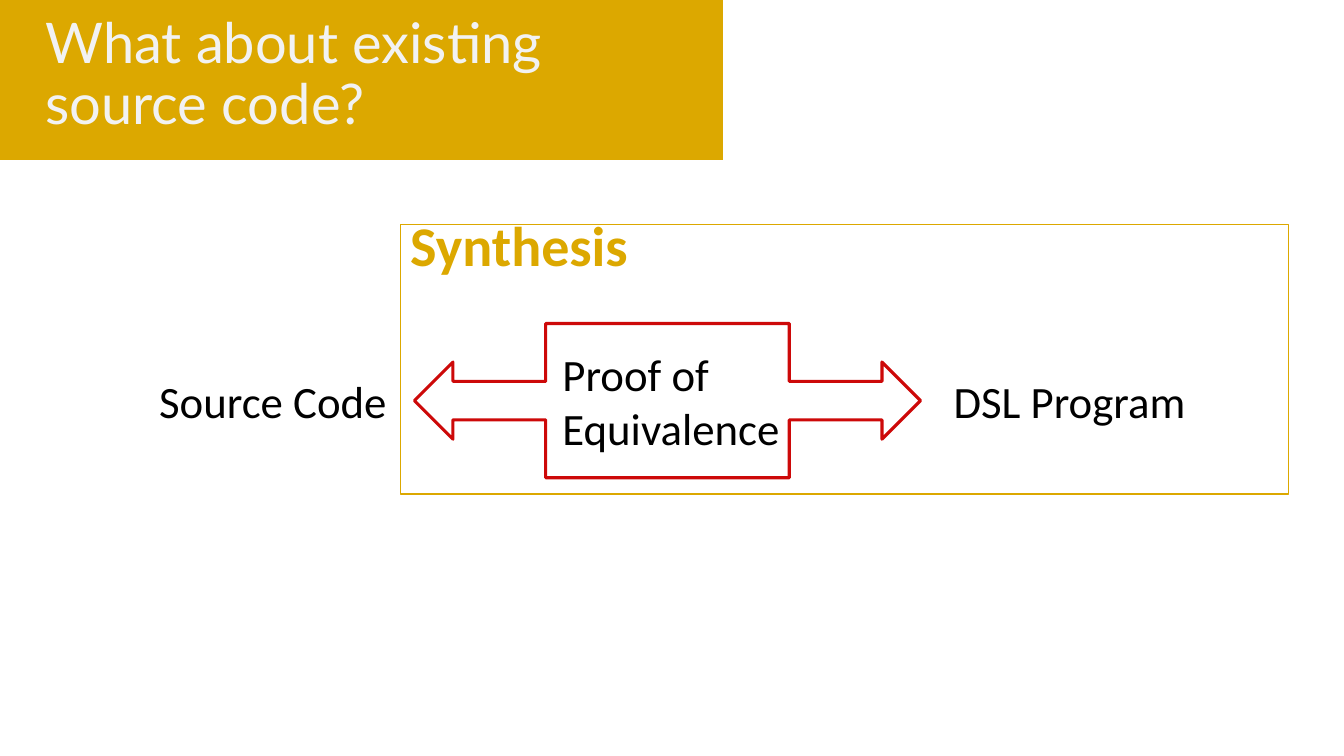
from dataclasses import dataclass

from pptx import Presentation
from pptx.dml.color import RGBColor
from pptx.enum.shapes import MSO_SHAPE as Shape
from pptx.enum.text import MSO_ANCHOR as Anchor, MSO_AUTO_SIZE as AutoSize, PP_ALIGN as Align
from pptx.slide import Slide
from pptx.util import Inches, Pt


@dataclass(frozen=True)
class Theme:
    gold: str = "DCA800"
    red: str = "CD0909"
    white: str = "FFFFFF"
    black: str = "000000"
    title_color: str = "F2F2F2"
    title_font: str = "Lato"
    body_font: str = "Calibri"
    large: int = 40
    body: int = 32


THEME = Theme()


@dataclass(frozen=True)
class Box:
    left: float
    top: float
    width: float
    height: float


@dataclass(frozen=True)
class Panel:
    kind: Shape
    box: Box
    fill: str
    line: str
    weight: float


@dataclass(frozen=True)
class Label:
    text: str
    box: Box
    size: int = THEME.body
    color: str = THEME.black
    bold: bool = False


PANELS = [
    Panel(Shape.FLOWCHART_PROCESS, Box(-0.01, -0.02, 7.19, 1.62), THEME.gold, THEME.white, 1.5),
    Panel(Shape.FLOWCHART_PROCESS, Box(3.97, 2.23, 8.81, 2.67), THEME.white, THEME.gold, 1),
    Panel(Shape.LEFT_RIGHT_ARROW_CALLOUT, Box(4.11, 3.21, 5.02, 1.53),
          THEME.white, THEME.red, 2.25),
]
LABELS = [
    Label("Source Code", Box(1.48, 3.66, 2.48, 0.64)),
    Label("DSL Program", Box(9.36, 3.66, 2.53, 0.64)),
    Label("Proof of\nEquivalence", Box(5.48, 3.39, 2.38, 1.18)),
    Label("Synthesis", Box(3.97, 2.04, 2.39, 0.77), THEME.large, THEME.gold, True),
]


def inches(box: Box) -> list[Inches]:
    return [Inches(value) for value in (box.left, box.top, box.width, box.height)]


def write(frame, text: str, *, font: str, size: int, color: str,
          bold: bool = False, spacing: float = 1.0) -> None:
    frame.text = text
    for para in frame.paragraphs:
        para.alignment = Align.LEFT
        para.line_spacing = spacing
        for span in para.runs:
            span.font.name = font
            span.font.size = Pt(size)
            span.font.bold = bold
            span.font.color.rgb = RGBColor.from_string(color)


def draw_panel(page: Slide, panel: Panel) -> None:
    shape = page.shapes.add_shape(panel.kind, *inches(panel.box))
    shape.shadow.inherit = False
    shape.fill.solid()
    shape.fill.fore_color.rgb = RGBColor.from_string(panel.fill)
    shape.line.color.rgb = RGBColor.from_string(panel.line)
    shape.line.width = Pt(panel.weight)


def draw_label(page: Slide, label: Label) -> None:
    frame = page.shapes.add_textbox(*inches(label.box)).text_frame
    frame.word_wrap = False
    frame.auto_size = AutoSize.SHAPE_TO_FIT_TEXT
    write(frame, label.text, font=THEME.body_font, size=label.size,
          color=label.color, bold=label.bold)


def draw_title(page: Slide, text: str, box: Box) -> None:
    title = page.shapes.title
    title.left, title.top, title.width, title.height = inches(box)
    frame = title.text_frame
    frame.word_wrap = True
    frame.auto_size = AutoSize.NONE
    frame.vertical_anchor = Anchor.MIDDLE
    write(frame, text, font=THEME.title_font, size=THEME.large,
          color=THEME.title_color, spacing=0.9)
    # Bring the title in front of its banner
    title.element.getparent().append(title.element)


def main() -> None:
    deck = Presentation()
    deck.slide_width, deck.slide_height = Inches(13.33), Inches(7.5)
    page = deck.slides.add_slide(deck.slide_layouts[5])

    # Banner, synthesis frame and double arrow
    for panel in PANELS:
        draw_panel(page, panel)

    # Title and labels; \v is a line break within the paragraph
    draw_title(page, "What about existing \vsource code?", Box(0.35, 0.03, 6.83, 1.45))
    for label in LABELS:
        draw_label(page, label)

    deck.save("out.pptx")


if __name__ == "__main__":
    main()
